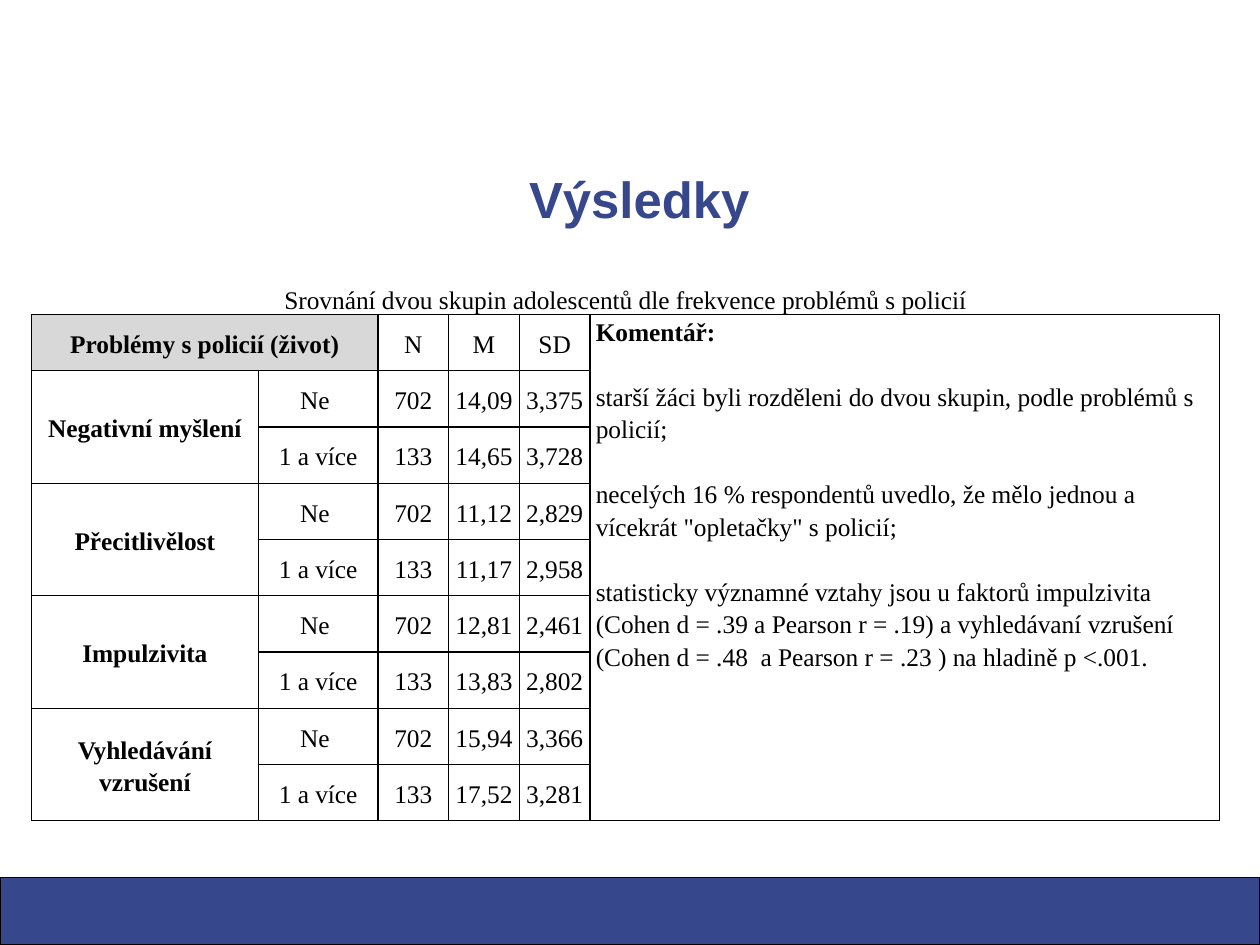
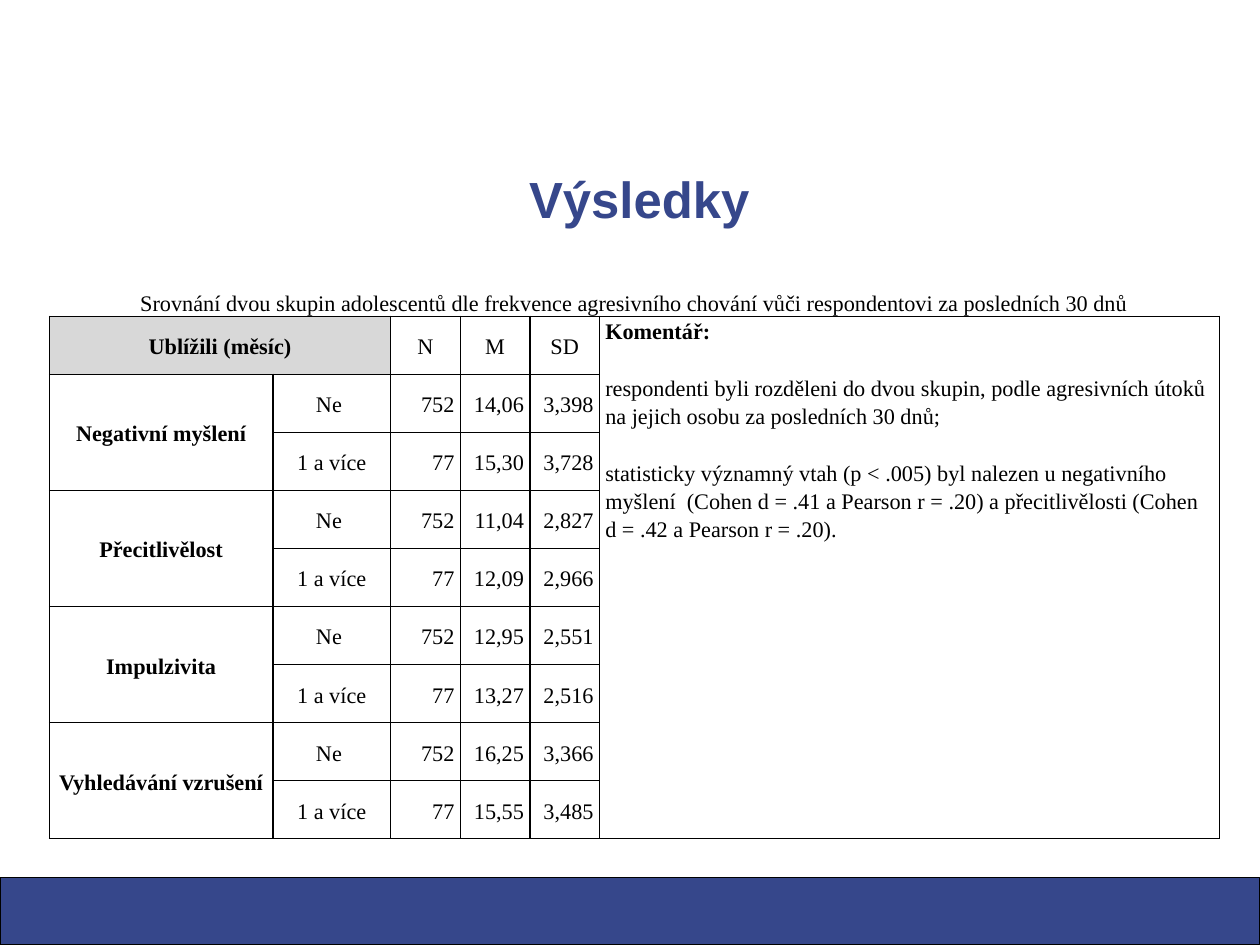
from lxml.etree import SubElement
from pptx import Presentation
from pptx.dml.color import RGBColor
from pptx.enum.shapes import MSO_SHAPE
from pptx.enum.text import MSO_ANCHOR, PP_ALIGN
from pptx.oxml.ns import qn
from pptx.util import Cm, Pt

COLORS = {"brand": "36478B", "ink": "000000", "header": "D8D8D8"}
TITLE_FONT, TABLE_FONT = "Arial", "Times New Roman"
WIDTH, HEIGHT, BAND = 28, 21, 1.5
COLUMNS = [5.04, 2.66, 1.57, 1.57, 1.57, 13.99]
NO_STYLE = "{2D5ABB26-0587-4C30-8999-92F81FD0307C}"
FACTORS = ["Negativní myšlení", "Přecitlivělost", "Impulzivita", "Vyhledávání vzrušení"]
GROUPS = ["Ne ", "1 a více"]

RESULTS = [
    {
        "caption": "Srovnání dvou skupin adolescentů dle frekvence problémů s policií",
        "header": "Problémy s policií (život)",
        "left": 0.7, "width": 26.4, "row": 1.25, "size": 16, "align": PP_ALIGN.CENTER,
        "counts": ["702", "133"],
        "stats": [("14,09", "3,375"), ("14,65", "3,728"), ("11,12", "2,829"), ("11,17", "2,958"),
                  ("12,81", "2,461"), ("13,83", "2,802"), ("15,94", "3,366"), ("17,52", "3,281")],
        "comments": [
            "starší žáci byli rozděleni do dvou skupin, podle problémů s policií;",
            "necelých 16 % respondentů uvedlo, že mělo jednou a vícekrát \"opletačky\" s policií;",
            "statisticky významné vztahy jsou u faktorů impulzivita (Cohen d = .39 a Pearson r = .19) "
            "a vyhledávaní vzrušení  (Cohen d = .48  a Pearson r = .23 ) na hladině p <.001.",
        ],
    },
    {
        "caption": "Srovnání dvou skupin adolescentů dle frekvence agresivního chování "
                   "vůči respondentovi za posledních 30 dnů",
        "header": "Ublížili (měsíc)",
        "left": 1.1, "width": 26, "row": 1.29, "size": 14, "align": PP_ALIGN.RIGHT,
        "counts": ["752", "77"],
        "stats": [("14,06", "3,398"), ("15,30", "3,728"), ("11,04", "2,827"), ("12,09", "2,966"),
                  ("12,95", "2,551"), ("13,27", "2,516"), ("16,25", "3,366"), ("15,55", "3,485")],
        "comments": [
            "respondenti byli rozděleni do dvou skupin, podle agresivních útoků "
            "na jejich osobu za posledních 30 dnů;",
            "statisticky významný vtah (p < .005) byl nalezen u negativního myšlení  "
            "(Cohen d = .41 a Pearson r = .20) a přecitlivělosti (Cohen d = .42 a Pearson r = .20).",
        ],
    },
]


def color(name):
    return RGBColor.from_string(COLORS[name])


class Deck:
    def __init__(self):
        self.prs = Presentation()
        self.prs.slide_width, self.prs.slide_height = Cm(WIDTH), Cm(HEIGHT)

    def add_slide(self, title):
        self.slide = self.prs.slides.add_slide(self.prs.slide_layouts[6])
        self.band()
        self.title(title)

    def band(self):
        sp = self.slide.shapes.add_shape(
            MSO_SHAPE.RECTANGLE, 0, Cm(HEIGHT - BAND), Cm(WIDTH), Cm(BAND))
        sp.shadow.inherit = False
        sp.fill.solid()
        sp.fill.fore_color.rgb = color("brand")
        sp.line.color.rgb = color("ink")
        sp.line.width = Pt(0.75)

    def title(self, text):
        tf = self.slide.shapes.add_textbox(Cm(0.91), Cm(3.76), Cm(26.6), Cm(1.4)).text_frame
        tf.margin_left = tf.margin_right = tf.margin_top = tf.margin_bottom = 0
        tf.word_wrap = True
        tf.vertical_anchor = MSO_ANCHOR.MIDDLE
        p = tf.paragraphs[0]
        p.text = text
        p.alignment = PP_ALIGN.CENTER
        p.line_spacing = 0.96
        self.style(p, TITLE_FONT, 32, "brand", True)

    def style(self, p, font, size, ink="ink", bold=False):
        p.font.name, p.font.size, p.font.bold = font, Pt(size), bold
        p.font.color.rgb = color(ink)

    def cell(self, row, col, lines, size, edges="LRTB", align=PP_ALIGN.CENTER,
             anchor=MSO_ANCHOR.MIDDLE, bold=False, fill=None, span=(1, 1)):
        """Fill a table cell; only its first line is bold, edges name the drawn borders."""
        cell = self.table.cell(row, col)
        if span != (1, 1):
            cell.merge(self.table.cell(row + span[0] - 1, col + span[1] - 1))
        cell.margin_left = cell.margin_right = Cm(0.13)
        cell.margin_top = cell.margin_bottom = 0
        cell.vertical_anchor = anchor
        tf = cell.text_frame
        for i, line in enumerate(lines):
            p = tf.add_paragraph() if i else tf.paragraphs[0]
            p.text = line
            p.alignment = align
            p.line_spacing = 1.15
            if i:
                p.space_before = Pt(round(size * 1.28, 1))
            self.style(p, TABLE_FONT, size, bold=bold and i == 0)
        self.borders(cell, edges)
        if fill:
            cell.fill.solid()
            cell.fill.fore_color.rgb = color(fill)
        else:
            cell.fill.background()

    def borders(self, cell, edges):
        tc_pr = cell._tc.get_or_add_tcPr()
        for edge in edges:
            ln = SubElement(tc_pr, qn(f"a:ln{edge}"), w=str(Pt(1)))
            solid = SubElement(ln, qn("a:solidFill"))
            SubElement(solid, qn("a:srgbClr"), val=COLORS["ink"])

    def result_table(self, data):
        rows = 2 + len(data["stats"])
        size = data["size"]
        self.table = self.slide.shapes.add_table(
            rows, len(COLUMNS), Cm(data["left"]), Cm(5.74),
            Cm(data["width"]), Cm(data["row"] * rows)).table
        tbl_pr = self.table._tbl.tblPr
        tbl_pr.find(qn("a:tableStyleId")).text = NO_STYLE
        self.table.first_row = self.table.horz_banding = False
        for column, share in zip(self.table.columns, COLUMNS):
            column.width = Cm(data["width"] * share / sum(COLUMNS))
        for row in self.table.rows:
            row.height = Cm(data["row"])

        self.cell(0, 0, [data["caption"]], size, "B", anchor=MSO_ANCHOR.BOTTOM,
                  span=(1, len(COLUMNS)))
        self.cell(1, 0, [data["header"]], size, bold=True, fill="header", span=(1, 2))
        for col, name in enumerate(["N", "M", "SD"], 2):
            self.cell(1, col, [name], size)
        self.cell(1, 5, ["Komentář:"] + data["comments"], size, "LTB", PP_ALIGN.LEFT,
                  MSO_ANCHOR.TOP, bold=True, span=(rows - 1, 1))
        for i, factor in enumerate(FACTORS):
            self.cell(2 + 2 * i, 0, [factor], size, bold=True, span=(2, 1))
        for i, stats in enumerate(data["stats"]):
            group = i % 2
            edges = "LRB" if group else "LRT"
            self.cell(2 + i, 1, [GROUPS[group]], size, edges)
            for col, value in enumerate([data["counts"][group], *stats], 2):
                self.cell(2 + i, col, [value], size, edges, data["align"])


def main():
    deck = Deck()
    for data in RESULTS:
        deck.add_slide("Výsledky")
        deck.result_table(data)
    deck.prs.save("out.pptx")


if __name__ == "__main__":
    main()
